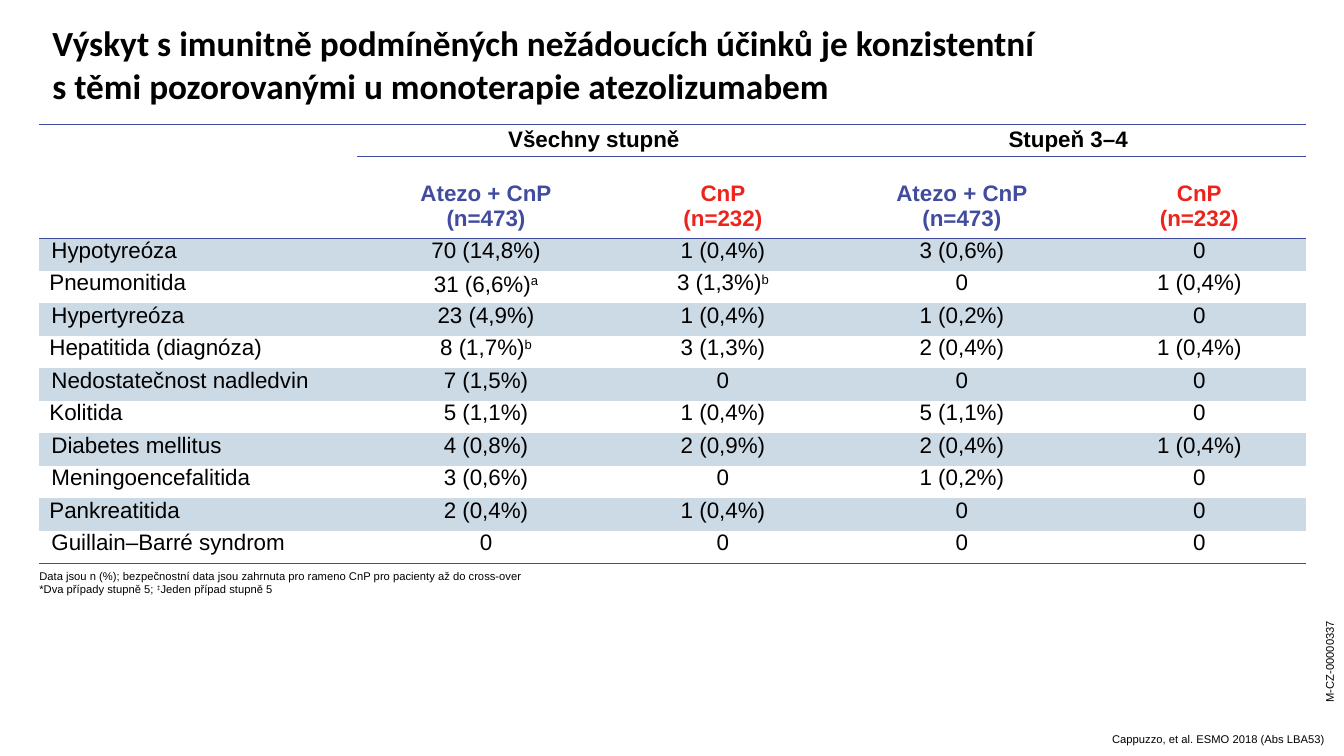
from dataclasses import dataclass

from lxml.etree import SubElement
from pptx import Presentation
from pptx.dml.color import RGBColor as Color
from pptx.enum.text import MSO_ANCHOR as Anchor, PP_ALIGN as Align
from pptx.oxml.ns import qn
from pptx.util import Inches, Pt


@dataclass(frozen=True)
class Theme:
    black: str = "000000"
    blue: str = "424C9F"
    red: str = "EC241D"
    band: str = "CCDAE5"
    heading_font: str = "Calibri"
    body_font: str = "Arial"
    title_size: float = 25.2
    table_size: float = 16
    note_size: float = 8
    rule_width: float = 0.75


THEME = Theme()
COLUMN_WIDTHS = (3.15, 2.56, 2.14, 2.6, 2.11)
ARMS_ROW_HEIGHT = 0.81
GRADES = ("", "Všechny stupně", "", "Stupeň 3–4", "")
ARMS = ("",) + ("Atezo + CnP\n(n=473)", "CnP\n(n=232)") * 2
EVENTS = (
    ("Hypotyreóza", "70 (14,8%)", "1 (0,4%)", "3 (0,6%)", "0"),
    ("Pneumonitida", "31 (6,6%)^a", "3 (1,3%)^b", "0", "1 (0,4%)"),
    ("Hypertyreóza", "23 (4,9%)", "1 (0,4%)", "1 (0,2%)", "0"),
    ("Hepatitida (diagnóza)", "8 (1,7%)^b", "3 (1,3%)", "2 (0,4%)", "1 (0,4%)"),
    ("Nedostatečnost nadledvin", "7 (1,5%)", "0", "0", "0"),
    ("Kolitida", "5 (1,1%)", "1 (0,4%)", "5 (1,1%)", "0"),
    ("Diabetes mellitus", "4 (0,8%)", "2 (0,9%)", "2 (0,4%)", "1 (0,4%)"),
    ("Meningoencefalitida", "3 (0,6%)", "0", "1 (0,2%)", "0"),
    ("Pankreatitida", "2 (0,4%)", "1 (0,4%)", "0", "0"),
    ("Guillain–Barré syndrom", "0", "0", "0", "0"),
)
INDENTED = {"Hypotyreóza", "Hypertyreóza", "Nedostatečnost nadledvin",
            "Diabetes mellitus", "Meningoencefalitida", "Guillain–Barré syndrom"}


def write(para, text, *, size, font=THEME.body_font, color=THEME.black,
          bold=False, align=Align.LEFT, indent=0, spacing=None):
    para.alignment = align
    if indent:
        para._p.get_or_add_pPr().set("indent", str(Inches(indent)))
    if spacing:
        para.line_spacing = spacing
    if not text:
        SubElement(para._p, qn("a:endParaRPr"), sz=str(int(size * 100)))
        return
    for part, piece in enumerate(text.split("^")):
        for number, line in enumerate(piece.split("\n")):
            if number:
                para.add_line_break()
            span = para.add_run()
            span.text = line
            span.font.name = font
            span.font.size = Pt(size)
            span.font.bold = bold
            span.font.color.rgb = Color.from_string(color)
            if part % 2:
                span._r.get_or_add_rPr().set("baseline", "30000")


def add_text(page, box, lines, *, anchor, inset=0, wrap=True, rotation=0, **style):
    shape = page.shapes.add_textbox(*map(Inches, box))
    shape.rotation = rotation
    frame = shape.text_frame
    frame.word_wrap = wrap
    frame.vertical_anchor = anchor
    frame.margin_left = frame.margin_right = Inches(inset)
    frame.margin_top = frame.margin_bottom = Inches(inset / 2)
    for number, line in enumerate(lines):
        para = frame.add_paragraph() if number else frame.paragraphs[0]
        write(para, line, **style)


def add_title(page, box):
    add_text(page, box, ["Výskyt s imunitně podmíněných nežádoucích účinků je konzistentní \n"
                         "s těmi pozorovanými u monoterapie atezolizumabem"],
             anchor=Anchor.MIDDLE, size=THEME.title_size,
             font=THEME.heading_font, bold=True)


def has_rule(edge, column, last_edge):
    return edge in (0, 2, last_edge) or (edge == 1 and column > 0)


def format_cell(cell, *, top, bottom, fill, anchor, side, end):
    cell.margin_left = cell.margin_right = Inches(side)
    cell.margin_top = cell.margin_bottom = Inches(end)
    cell.vertical_anchor = anchor
    properties = cell._tc.get_or_add_tcPr()
    for tag, ruled in (("lnL", False), ("lnR", False), ("lnT", top), ("lnB", bottom)):
        line = SubElement(properties, qn(f"a:{tag}"), w=str(Pt(THEME.rule_width)))
        if ruled:
            paint = SubElement(line, qn("a:solidFill"))
            SubElement(paint, qn("a:srgbClr"), val=THEME.blue)
        else:
            SubElement(line, qn("a:noFill"))
    if fill:
        cell.fill.solid()
        cell.fill.fore_color.rgb = Color.from_string(fill)
    else:
        cell.fill.background()


def add_events_table(page, box):
    rows = (GRADES, ARMS) + EVENTS
    frame = page.shapes.add_table(len(rows), len(COLUMN_WIDTHS), *map(Inches, box))
    table = frame.table
    table.first_row = table.horz_banding = False
    for column, width in zip(table.columns, COLUMN_WIDTHS):
        column.width = Inches(width)
    row_height = (box[3] - ARMS_ROW_HEIGHT) / (len(rows) - 1)
    for r, texts in enumerate(rows):
        table.rows[r].height = Inches(ARMS_ROW_HEIGHT if r == 1 else row_height)
        anchor = (Anchor.MIDDLE, Anchor.BOTTOM)[r] if r < 2 else Anchor.TOP
        for c, text in enumerate(texts):
            cell = table.cell(r, c)
            format_cell(cell, top=has_rule(r, c, len(rows)),
                        bottom=has_rule(r + 1, c, len(rows)),
                        fill=THEME.band if r > 1 and r % 2 == 0 else None,
                        anchor=anchor, side=0.13 if r == 1 else 0.1,
                        end=0.07 if r == 1 else 0)
            arm_color = THEME.blue if c % 2 else THEME.red
            write(cell.text_frame.paragraphs[0], text, size=THEME.table_size,
                  color=arm_color if r == 1 else THEME.black, bold=r < 2,
                  align=Align.CENTER if c else Align.LEFT,
                  indent=0.02 if text in INDENTED else 0,
                  spacing=1.07 if text.endswith("^a") else None)
    for c in (1, 3):
        table.cell(0, c).merge(table.cell(0, c + 1))


def add_footnotes(page, box):
    add_text(page, box, [
        "Data jsou n (%); bezpečnostní data jsou zahrnuta pro rameno CnP pro pacienty až do cross-over",
        "*Dva případy stupně 5; ^‡^Jeden případ stupně 5",
    ], anchor=Anchor.BOTTOM, size=THEME.note_size)


def add_citation(page, box):
    add_text(page, box, ["Cappuzzo, et al. ESMO 2018 (Abs LBA53)"],
             anchor=Anchor.BOTTOM, size=THEME.note_size, align=Align.RIGHT)


def add_document_code(page, box):
    add_text(page, box, ["M-CZ-00000337"], anchor=Anchor.TOP, inset=0.1,
             wrap=False, rotation=270, size=THEME.note_size)


def main():
    deck = Presentation()
    deck.slide_width, deck.slide_height = Inches(13.33), Inches(7.5)
    page = deck.slides.add_slide(deck.slide_layouts[6])
    add_document_code(page, (12.68, 6.44, 1.02, 0.24))
    add_title(page, (0.52, 0.18, 11.97, 0.91))
    add_footnotes(page, (0.39, 5.44, 7.27, 0.47))
    add_citation(page, (7.16, 6.93, 5.98, 0.47))
    add_events_table(page, (0.39, 1.23, 12.56, 4.36))
    deck.save("out.pptx")


if __name__ == "__main__":
    main()
